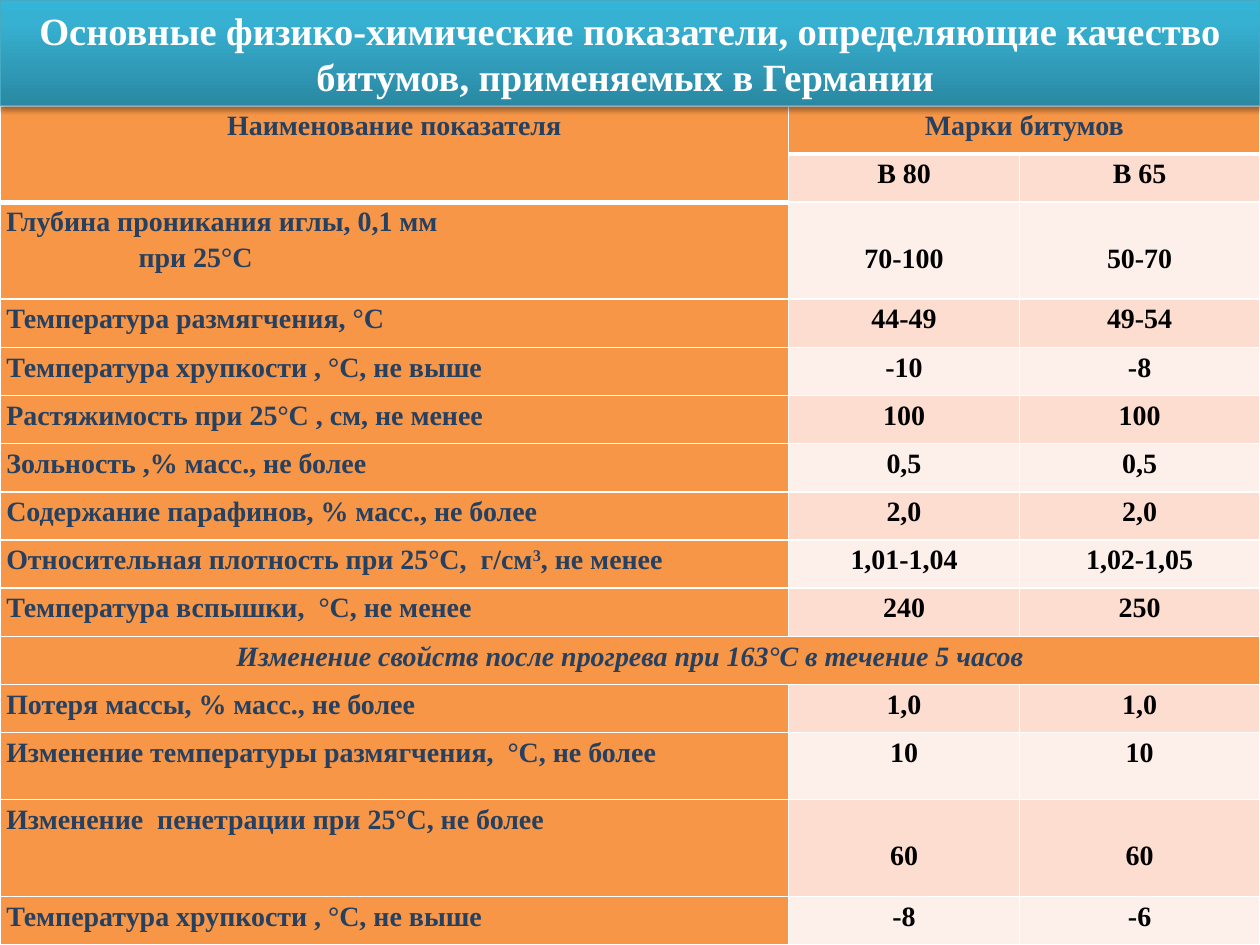
import copy

import lxml.etree
import pptx
import pptx.dml.color
import pptx.enum.shapes
import pptx.enum.text
import pptx.oxml
import pptx.oxml.ns
import pptx.util

Inches = pptx.util.Inches
Pt = pptx.util.Pt
qn = pptx.oxml.ns.qn
ALIGN = pptx.enum.text.PP_ALIGN
FONT = "Times New Roman"
COLORS = {
    "white": "FFFFFF", "black": "000000", "navy": "254061",
    "orange": "F79646", "rose": "FCDDCF", "pale": "FDEFE9",
    "deep": "2A88A2", "teal": "37B1D2", "sky": "34B4D6", "edge": "46AAC5",
}
TITLE = "Основные физико-химические показатели, определяющие качество битумов, применяемых в Германии "
ROWS = [
    ("Наименование показателя", "Марки битумов", ""),
    ("", "В 80", "В 65"),
    ("Глубина проникания иглы, 0,1 мм\nпри 25°С", "70-100", "50-70"),
    ("Температура размягчения, °С", "44-49", "49-54"),
    ("Температура хрупкости , °С, не выше", "-10", "-8"),
    ("Растяжимость при 25°С , см, не менее", "100", "100"),
    ("Зольность ,% масс., не более", "0,5", "0,5"),
    ("Содержание парафинов, % масс., не более", "2,0", "2,0"),
    ("Относительная плотность при 25°С,  г/см^3^, не менее", "1,01-1,04", "1,02-1,05"),
    ("Температура вспышки,  °С, не менее", "240", "250"),
    ("Изменение свойств после прогрева при 163°С в течение 5 часов", "", ""),
    ("Потеря массы, % масс., не более", "1,0", "1,0"),
    ("Изменение температуры размягчения,  °С, не более", "10", "10"),
    ("Изменение  пенетрации при 25°С, не более", "60", "60"),
    ("Температура хрупкости , °С, не выше", "-8", "-6"),
]
COLS = [6.26, 1.83, 1.91]
TALL = {2: 0.77, 12: 0.53, 13: 0.77}
LOW = (2, 13)
BAND = 10
TOP, HIGH = 0.84, 6.66


def tone(name):
    return pptx.dml.color.RGBColor.from_string(COLORS[name])


def write(frame, text, size=16, color="black", align=ALIGN.CENTER, slant=False, space=1.15, indent=1.05):
    for i, line in enumerate(text.split("\n")):
        para = frame.paragraphs[0] if i == 0 else frame.add_paragraph()
        para.alignment = align
        para.line_spacing = space
        if i:
            para._p.get_or_add_pPr().set("marL", str(Inches(indent)))
        for j, part in enumerate(line.split("^")):
            run = para.add_run()
            run.text = part
            font = run.font
            font.name, font.size, font.bold, font.italic = FONT, Pt(size), True, slant
            font.color.rgb = tone(color)
            if j % 2:
                run._r.get_or_add_rPr().set("baseline", "30000")


def rule(cell, **widths):
    props = cell._tc.get_or_add_tcPr()
    for i, side in enumerate("LRTB"):
        line = pptx.oxml.parse_xml(
            f'<a:ln{side} {pptx.oxml.ns.nsdecls("a")} w="{Pt(widths.get(side, 1))}">'
            f'<a:solidFill><a:srgbClr val="{COLORS["white"]}"/></a:solidFill></a:ln{side}>')
        props.insert(i, line)


def shade(cell, row, col):
    if col == 0 or row in (0, BAND):
        name = "orange"
    else:
        name = "rose" if row % 2 else "pale"
    cell.fill.solid()
    cell.fill.fore_color.rgb = tone(name)


def add_grid(slide):
    table = slide.shapes.add_table(len(ROWS), len(COLS), 0, Inches(TOP), Inches(10), Inches(HIGH)).table
    for col, width in zip(table.columns, COLS):
        col.width = Inches(width)
    base = (HIGH - sum(TALL.values())) / (len(ROWS) - len(TALL))
    for r, texts in enumerate(ROWS):
        table.rows[r].height = Inches(TALL.get(r, base))
        for c, text in enumerate(texts):
            cell = table.cell(r, c)
            cell.margin_left = cell.margin_right = Inches(0.05)
            cell.margin_top = Inches(0.29 if c and r in LOW else 0)
            cell.margin_bottom = 0
            shade(cell, r, c)
            last = 0 if c else 1
            rule(cell, B=3 if r == last else 1, T=3 if r == last + 1 else 1)
            if text:
                head = c == 0 or r == 0
                mid = c > 0 or r in (0, BAND)
                write(cell.text_frame, text, color="navy" if head else "black",
                      align=ALIGN.CENTER if mid else ALIGN.LEFT, slant=r == BAND)
    for first, last in [((0, 0), (1, 0)), ((0, 1), (0, 2)), ((BAND, 0), (BAND, 2))]:
        table.cell(*first).merge(table.cell(*last))


def blend(fill, stops, angle):
    fill.gradient()
    fill.gradient_angle = angle
    item = fill.gradient_stops[0]._gs
    item.getparent().append(copy.deepcopy(item))
    for stop, (place, name) in zip(fill.gradient_stops, stops):
        stop.position = place
        stop.color.rgb = tone(name)


def cast(shape, blur, dist, alpha):
    shape.shadow.inherit = False
    effects = shape._element.spPr.find(qn("a:effectLst"))
    shadow = lxml.etree.SubElement(effects, qn("a:outerShdw"), blurRad=str(Pt(blur)),
                                   dist=str(Pt(dist)), dir="5400000", rotWithShape="0")
    color = lxml.etree.SubElement(shadow, qn("a:srgbClr"), val=COLORS["black"])
    lxml.etree.SubElement(color, qn("a:alpha"), val=str(alpha * 1000))


def add_title(slide):
    kind = pptx.enum.shapes.MSO_SHAPE.RECTANGLE
    shape = slide.shapes.add_shape(kind, 0, 0, Inches(10), Inches(TOP))
    blend(shape.fill, [(0, "deep"), (0.8, "teal"), (1, "sky")], 90)
    shape.line.color.rgb = tone("edge")
    shape.line.width = Pt(0.75)
    cast(shape, 3.1, 1.8, 35)
    frame = shape.text_frame
    frame.word_wrap = True
    frame.auto_size = pptx.enum.text.MSO_AUTO_SIZE.SHAPE_TO_FIT_TEXT
    frame.vertical_anchor = pptx.enum.text.MSO_ANCHOR.MIDDLE
    write(frame, TITLE, size=22, color="white", space=None)


def main():
    """Build the slide on bitumen quality in Germany."""
    deck = pptx.Presentation()
    deck.slide_width, deck.slide_height = Inches(10), Inches(7.5)
    slide = deck.slides.add_slide(deck.slide_layouts[6])
    add_grid(slide)
    add_title(slide)
    deck.save("out.pptx")


if __name__ == "__main__":
    main()
